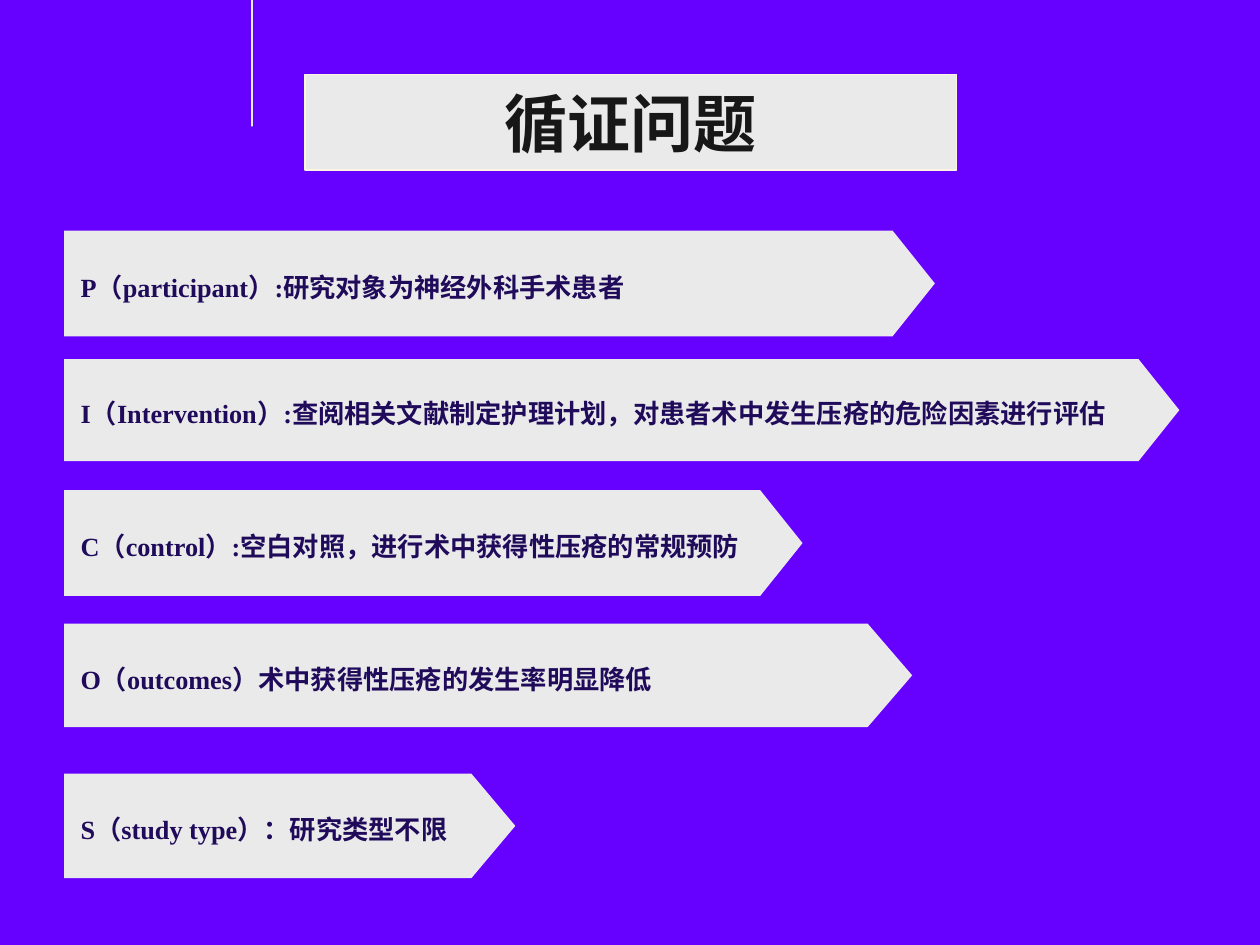
from lxml.etree import SubElement
from pptx import Presentation
from pptx.dml.color import RGBColor
from pptx.enum.shapes import MSO_SHAPE as Shape
from pptx.enum.text import MSO_ANCHOR as Anchor, PP_ALIGN as Align
from pptx.oxml import parse_xml
from pptx.oxml.ns import nsdecls, qn
from pptx.util import Inches, Pt

THEME = {
    "background": "6600FF", "panel": "EAEAEA", "panel_line": "FFF5E0",
    "star": "6600CC", "title": "171717", "title_outline": "F5D4AA",
    "text": "200B5B", "font": "Times New Roman",
    "title_size": 36, "text_size": 15, "line_width": 0.75,
}
TITLE = "循证问题"
TITLE_BOX = (2.42, 0.59, 5.17, 0.76)
STAR_POINTS = [(2.04, 0.46), (2.2, 0.54), (2.32, 0.43), (2.3, 0.59), (2.46, 0.68),
               (2.29, 0.69), (2.27, 0.85), (2.18, 0.7), (2.01, 0.72), (2.13, 0.61)]
BANNER_LEFT = 0.51
# text, top, width, height, point depth as a share of the height
BANNERS = [
    ("P（participant）:研究对象为神经外科手术患者", 1.83, 6.91, 0.84, 0.4),
    ("I（Intervention）:查阅相关文献制定护理计划，对患者术中发生压疮的危险因素进行评估",
     2.85, 8.85, 0.81, 0.4),
    ("C（control）:空白对照，进行术中获得性压疮的常规预防", 3.89, 5.86, 0.84, 0.4),
    ("O（outcomes）术中获得性压疮的发生率明显降低", 4.95, 6.73, 0.82, 0.43),
    ("S（study type）：研究类型不限", 6.14, 3.58, 0.83, 0.42),
]
BANNER_FRAME = {
    "margin_left": Inches(0.13), "margin_right": Inches(0.13),
    "margin_top": Inches(0.06), "margin_bottom": Inches(0.06),
    "vertical_anchor": Anchor.MIDDLE, "word_wrap": False,
}
TITLE_FRAME = {
    "margin_left": Inches(0.1), "margin_right": Inches(0.1),
    "margin_top": Inches(0.05), "margin_bottom": Inches(0.05),
    "vertical_anchor": Anchor.MIDDLE, "word_wrap": False,
}
HANGING_INDENT = Inches(0.49)


def color(role):
    return RGBColor.from_string(THEME[role])


def set_all(target, values):
    for name, value in values.items():
        setattr(target, name, value)


def paint(shape, fill, line=None):
    shape.fill.solid()
    shape.fill.fore_color.rgb = color(fill)
    if line:
        shape.line.color.rgb = color(line)
        shape.line.width = Pt(THEME["line_width"])
    else:
        shape.line.fill.background()


def write(shape, text, role, frame_format, paragraph_format):
    """Fill the shape with one bold paragraph and return its run."""
    frame = shape.text_frame
    frame.text = text
    set_all(frame, frame_format)
    paragraph = frame.paragraphs[0]
    set_all(paragraph, {"space_before": Pt(0), **paragraph_format})
    run = paragraph.runs[0]
    set_all(run.font, {"name": THEME["font"], "size": Pt(THEME[f"{role}_size"]), "bold": True})
    run.font.color.rgb = color(role)
    return run


def add_star(slide):
    builder = slide.shapes.build_freeform(*STAR_POINTS[0], scale=Inches(1))
    builder.add_line_segments(STAR_POINTS[1:], close=True)
    star = builder.convert_to_shape()
    star.shadow.inherit = False
    paint(star, "star", "panel")


def format_title(slide):
    title = slide.shapes.title
    set_all(title, dict(zip(("left", "top", "width", "height"), map(Inches, TITLE_BOX))))
    rounded = SubElement(title._element.spPr, qn("a:prstGeom"), prst="roundRect")
    SubElement(SubElement(rounded, qn("a:avLst")), qn("a:gd"), name="adj", fmla="val 10200")
    paint(title, "panel", "panel_line")
    run = write(title, TITLE, "title", TITLE_FRAME, {"alignment": Align.CENTER})
    outline = parse_xml(
        f'<a:ln {nsdecls("a")} w="{Pt(0.8)}"><a:solidFill>'
        f'<a:srgbClr val="{THEME["title_outline"]}"/></a:solidFill></a:ln>')
    run.font._element.insert(0, outline)
    slide.shapes._spTree.append(title._element)  # in front of the star


def add_banner(slide, text, top, width, height, depth):
    box = map(Inches, (BANNER_LEFT, top, width, height))
    banner = slide.shapes.add_shape(Shape.PENTAGON, *box)
    banner.adjustments[0] = depth
    banner.shadow.inherit = False
    paint(banner, "panel")
    write(banner, text, "text", BANNER_FRAME,
          {"alignment": Align.LEFT, "line_spacing": 1.2})
    properties = banner.text_frame.paragraphs[0]._p.get_or_add_pPr()
    properties.set("marL", str(HANGING_INDENT))
    properties.set("indent", str(-HANGING_INDENT))


def main():
    deck = Presentation()
    set_all(deck, {"slide_width": Inches(10), "slide_height": Inches(7.5)})
    slide = deck.slides.add_slide(deck.slide_layouts.get_by_name("Title Only"))
    slide.background.fill.solid()
    slide.background.fill.fore_color.rgb = color("background")
    add_star(slide)
    format_title(slide)
    for banner in BANNERS:
        add_banner(slide, *banner)
    deck.save("out.pptx")


if __name__ == "__main__":
    main()
